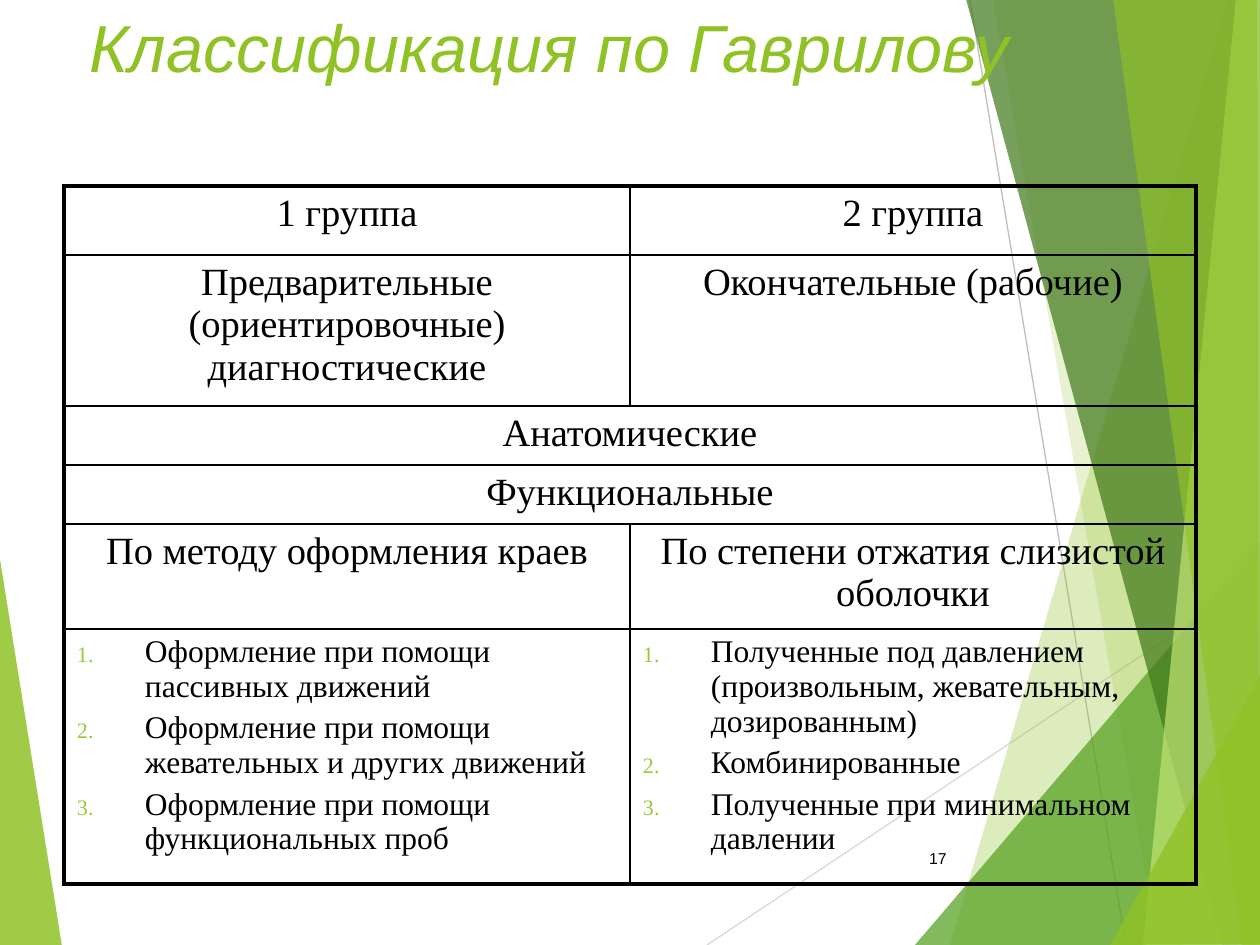
from lxml import etree
from pptx import Presentation
from pptx.dml.color import RGBColor
from pptx.enum.shapes import MSO_CONNECTOR
from pptx.enum.text import MSO_ANCHOR, PP_ALIGN
from pptx.oxml.ns import qn
from pptx.util import Emu, Pt

PX = 914400 / 126
LEFT, CENTER, RIGHT = PP_ALIGN.LEFT, PP_ALIGN.CENTER, PP_ALIGN.RIGHT
TOP, MIDDLE = MSO_ANCHOR.TOP, MSO_ANCHOR.MIDDLE
STRAIGHT = MSO_CONNECTOR.STRAIGHT
COLORS = {
    "green": "90C226",
    "leaf": "54A021",
    "forest": "3F7819",
    "lime": "C0E474",
    "number": "99CA3C",
    "black": "000000",
    "pale_gray": "D9D9D9",
    "gray": "BFBFBF",
}
RAYS = [((707, 945), (1261, 576), "pale_gray"), ((970, 0), (1126, 945), "gray")]
LEFT_FACET = ([(-1, 553), (62, 946), (-1, 945)], "green", 85)
RIGHT_FACETS = [
    ([(1228, 0), (950, 945), (1262, 946), (1261, 1)], "green", 30),
    ([(993, -1), (1158, 945), (1261, 945), (1261, -1)], "green", 20),
    ([(915, 945), (1260, 541), (1261, 945)], "leaf", 72),
    ([(966, -1), (1222, 945), (1261, 944), (1261, -1)], "forest", 70),
    ([(1236, -1), (1143, 945), (1261, 945), (1260, -1)], "lime", 70),
    ([(1113, -1), (1242, 945), (1260, 945), (1257, -1)], "green", 65),
    ([(1110, 945), (1261, 674), (1261, 944)], "green", 80),
]
ROW_HEIGHTS = [69, 151, 59, 59, 105, 255]
HEADINGS = [
    ["1 группа", "2 группа"],
    ["Предварительные (ориентировочные) диагностические", "Окончательные (рабочие)"],
    ["Анатомические"],
    ["Функциональные"],
    ["По методу оформления краев", "По степени отжатия слизистой оболочки"],
]
METHODS = [
    [
        "Оформление при помощи пассивных движений",
        "Оформление при помощи жевательных и других движений",
        "Оформление при помощи функциональных проб",
    ],
    [
        "Полученные под давлением (произвольным, жевательным, дозированным)",
        "Комбинированные",
        "Полученные при минимальном давлении",
    ],
]


def px(length):
    return Emu(round(length * PX))


def color(name):
    return RGBColor.from_string(COLORS[name])


def add_color(parent, name):
    return etree.SubElement(parent, qn("a:srgbClr"), val=COLORS[name])


def number_paragraph(paragraph):
    properties = paragraph._p.get_or_add_pPr()
    properties.set("marL", str(px(68)))
    properties.set("indent", str(px(-68)))
    add_color(etree.SubElement(properties, qn("a:buClr")), "number")
    etree.SubElement(properties, qn("a:buSzPct"), val="70000")
    etree.SubElement(properties, qn("a:buAutoNum"), type="arabicPeriod")


def write_text(frame, lines, size, font="Times New Roman", fill="black",
               align=LEFT, italic=False, numbered=False, spacing=0.0):
    frame.word_wrap = True
    for index, line in enumerate(lines):
        paragraph = frame.add_paragraph() if index else frame.paragraphs[0]
        paragraph.alignment = align
        paragraph.space_before = Pt(size * spacing)
        if numbered:
            number_paragraph(paragraph)
        run = paragraph.add_run()
        run.text = line
        run.font.name = font
        run.font.size = Pt(size)
        run.font.italic = italic
        run.font.color.rgb = color(fill)


def add_text_box(slide, box, text, size, anchor=TOP, **text_format):
    shape = slide.shapes.add_textbox(*map(px, box))
    shape.text_frame.vertical_anchor = anchor
    write_text(shape.text_frame, [text], size, font="Arial", **text_format)


def add_facet(slide, origin, points, fill, opacity):
    left, top = origin
    corners = [(left + x, top + y) for x, y in points]
    builder = slide.shapes.build_freeform(*corners[0], scale=PX)
    builder.add_line_segments(corners[1:], close=True)
    shape = builder.convert_to_shape()
    shape.shadow.inherit = False
    shape.fill.solid()
    shape.fill.fore_color.rgb = color(fill)
    shape.line.fill.background()
    for element in shape._element.spPr.find(qn("a:solidFill")):
        etree.SubElement(element, qn("a:alpha"), val=str(opacity * 1000))


def add_ray(slide, origin, start, end, line_color):
    left, top = origin
    ray = slide.shapes.add_connector(
        STRAIGHT, px(left + start[0]), px(top + start[1]), px(left + end[0]), px(top + end[1]))
    ray.line.color.rgb = color(line_color)
    ray.line.width = Pt(0.75)
    etree.SubElement(ray._element.spPr, qn("a:effectLst"))


def add_backdrop(slide, origin):
    add_facet(slide, origin, *LEFT_FACET)
    for ray in RAYS:
        add_ray(slide, origin, *ray)
    for facet in RIGHT_FACETS:
        add_facet(slide, origin, *facet)


def style_cell(cell, outer_sides):
    properties = cell._tc.get_or_add_tcPr()
    for side in "LRTB":
        width = Pt(2.25 if side in outer_sides else 1)
        line = etree.SubElement(properties, qn(f"a:ln{side}"), w=str(width))
        add_color(etree.SubElement(line, qn("a:solidFill")), "black")
    cell.fill.background()
    cell.margin_left = cell.margin_right = px(13)
    cell.margin_top = cell.margin_bottom = px(6)


def add_classification(slide, box):
    row_count = len(ROW_HEIGHTS)
    frame = slide.shapes.add_table(row_count, 2, *map(px, box))
    table = frame.table
    table.first_row = table.horz_banding = False
    for column in table.columns:
        column.width = px(box[2] // 2)
    for index, height in enumerate(ROW_HEIGHTS):
        table.rows[index].height = px(height)
        merged = index < len(HEADINGS) and len(HEADINGS[index]) == 1
        vertical = {0: "T", row_count - 1: "B"}.get(index, "")
        for column in range(2):
            sides = "LR" if merged else "LR"[column]
            style_cell(table.cell(index, column), sides + vertical)
        if merged:
            table.cell(index, 0).merge(table.cell(index, 1))
    for row, headings in enumerate(HEADINGS):
        for column, heading in enumerate(headings):
            write_text(table.cell(row, column).text_frame, [heading], 22,
                       align=CENTER, spacing=0.2)
    for column, methods in enumerate(METHODS):
        write_text(table.cell(row_count - 1, column).text_frame, methods, 18,
                   numbered=True, spacing=0.2)


def main():
    presentation = Presentation()
    presentation.slide_width = px(1260)
    presentation.slide_height = px(945)
    slide = presentation.slides.add_slide(presentation.slide_layouts[6])
    add_backdrop(slide, (0, 0))
    add_text_box(slide, (77, 0, 1134, 158), "Классификация по Гаврилову", 38,
                 fill="green", italic=True)
    add_classification(slide, (64, 186, 1132, sum(ROW_HEIGHTS)))
    add_text_box(slide, (888, 833, 71, 50), "17", 9, anchor=MIDDLE, align=RIGHT)
    presentation.save("out.pptx")


if __name__ == "__main__":
    main()
